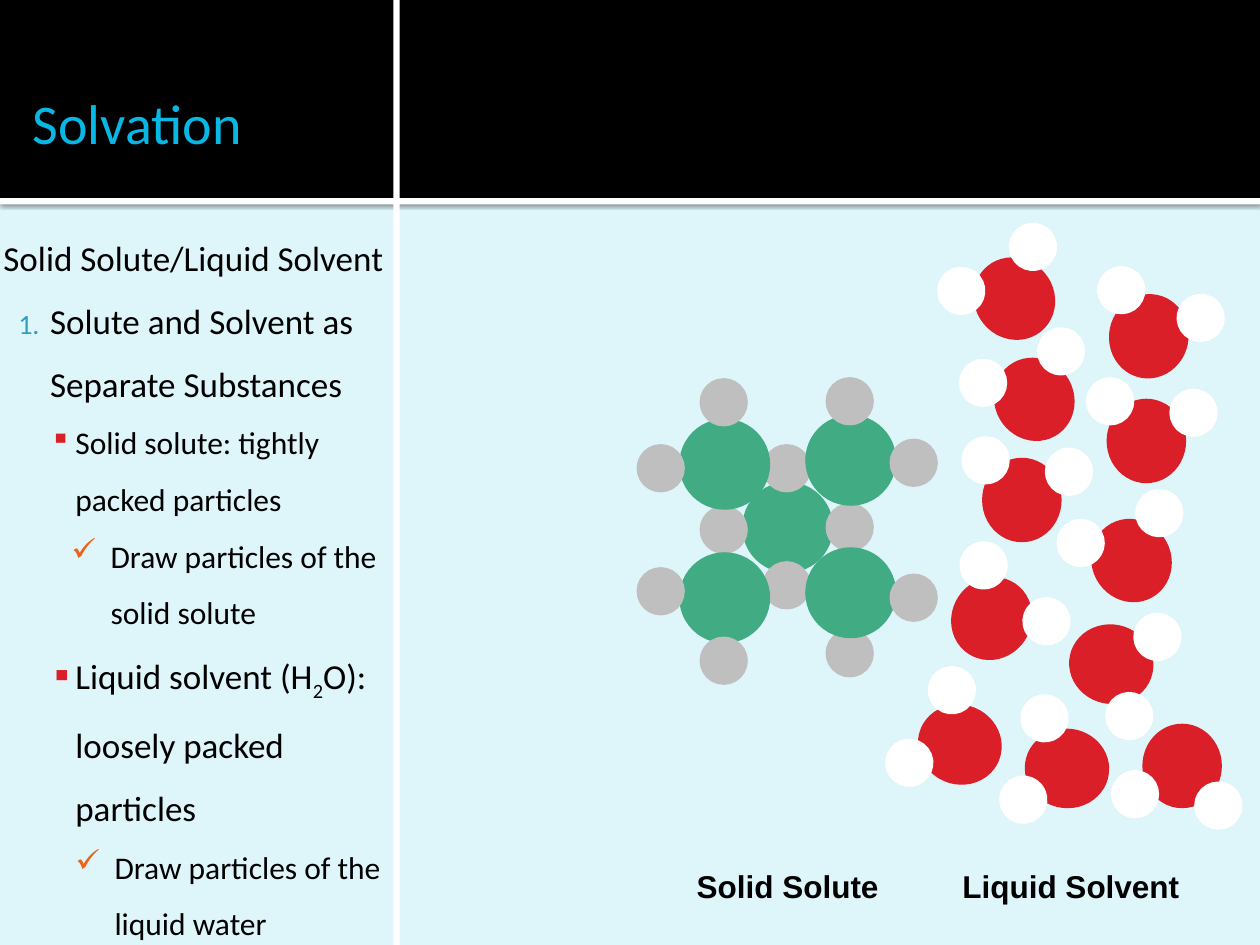
import math
import pptx
import pptx.util
import pptx.dml.color
import pptx.enum.shapes
import pptx.enum.text
import pptx.oxml
import pptx.oxml.ns

Cm, Pt = pptx.util.Cm, pptx.util.Pt
ANCHOR = pptx.enum.text.MSO_ANCHOR
ALIGN = pptx.enum.text.PP_ALIGN
SHAPE = pptx.enum.shapes.MSO_SHAPE
NS = pptx.oxml.ns.nsdecls("a")

COLORS = {
    "sky": "DEF5FA", "black": "000000", "white": "FFFFFF", "title": "08B8E4",
    "solid": "41AB83", "grey": "BFBFBF", "red": "DA1F28",
    "number": "2DA2BF", "check": "EB641B",
}

# Crystal balls from back to front: colour, then centres in cm
CRYSTAL = [
    ("solid", [(2.98, 2.96)]),
    ("grey", [(4.23, 2.96), (4.23, 5.5), (2.96, 1.77), (1.69, 3.01), (2.96, 4.13)]),
    ("solid", [(1.71, 4.38), (4.25, 4.28), (4.25, 1.61), (1.71, 1.69)]),
    ("grey", [(1.69, 5.65), (5.52, 1.66), (5.52, 4.38), (0.42, 1.77),
              (4.23, 0.42), (0.42, 4.25), (1.69, 0.44)]),
]
BALLS = {"solid": 1.7, "grey": 0.84}

# Water: oxygen centre in cm and turn in degrees
WATER = [
    (2.19, 7.97, 33.8), (3.05, 3.55, 330.2), (6.03, 10.94, 180), (5.31, 4.39, 0),
    (5.36, 2.28, 11.5), (2.8, 5.58, 0), (5.01, 6.8, 331.4), (4.6, 8.89, 101.8),
    (1.55, 10.51, 292.6), (2.65, 1.52, 320.7), (3.71, 10.99, 276.8),
]
BONDS = [(-0.73, -0.8), (0.95, -0.57)]

# Bullet styles: level, left margin, hanging indent, bullet, colour, size %
STYLES = {
    "plain": (0, 0, 0, None, None, 100),
    "number": (0, 0.94, -0.64, "1.", "number", 80),
    "square": (1, 1.45, -0.51, "▪", "red", 90),
    "check": (2, 2.16, -0.79, "✓", "check", 100),
    "check2": (2, 2.24, -0.79, "✓", "check", 100),
}
POINTS = [
    ("plain", 20, ["Solid Solute/Liquid Solvent"]),
    ("number", 20, ["Solute and Solvent as Separate Substances"]),
    ("square", 18, ["Solid solute: tightly packed particles"]),
    ("check", 18, ["Draw particles of the solid solute"]),
    ("square", 20, ["Liquid solvent (H", "2", "O): loosely packed particles"]),
    ("check2", 18, ["Draw particles of the liquid water"]),
]


def shade(name):
    return pptx.dml.color.RGBColor.from_string(COLORS[name])


def shape(slide, kind, box, color, line=None, turn=0):
    part = slide.shapes.add_shape(kind, *map(Cm, box))
    part.shadow.inherit = False
    part.fill.solid()
    part.fill.fore_color.rgb = shade(color)
    part.rotation = turn
    if line:
        part.line.color.rgb = shade(color)
        part.line.width = Pt(line)
    else:
        part.line.fill.background()
    return part


def ball(slide, x, y, wide, high, color, turn=0):
    box = (x - wide / 2, y - high / 2, wide, high)
    shape(slide, SHAPE.OVAL, box, color, 3.78, turn)


def frame(slide, box, pads=(0.25, 0.13, 0.25, 0.13), **form):
    text = slide.shapes.add_textbox(*map(Cm, box)).text_frame
    left, top, right, base = map(Cm, pads)
    form = {"word_wrap": True, "margin_left": left, "margin_top": top,
            "margin_right": right, "margin_bottom": base, **form}
    for key, value in form.items():
        setattr(text, key, value)
    return text


def write(para, words, color="black", **form):
    run = para.add_run()
    run.text = words
    for key, value in form.items():
        setattr(run.font, key, value)
    run.font.color.rgb = shade(color)
    return run


def bullet(para, style):
    level, left, hang, mark, color, size = STYLES[style]
    para.level = level
    props = para._p.get_or_add_pPr()
    props.set("marL", str(Cm(left)))
    props.set("indent", str(Cm(hang)))
    if mark is None:
        parts = ["<a:buNone %s/>"]
    else:
        sign = ('<a:buAutoNum %s type="arabicPeriod"/>' if mark == "1."
                else f'<a:buChar %s char="{mark}"/>')
        parts = [f'<a:buClr %s><a:srgbClr val="{COLORS[color]}"/></a:buClr>',
                 f'<a:buSzPct %s val="{size * 1000}"/>', sign]
    for part in parts:
        props.append(pptx.oxml.parse_xml(part.replace("%s", NS)))


def bands(slide, box):
    left, top, wide, high = box
    head, gap = 3.99, 0.13
    rule = shape(slide, SHAPE.RECTANGLE, (left, top + head, wide, gap), "white")
    # Soft shadow below the rule
    props = rule._element.spPr
    props.remove(props.find(pptx.oxml.ns.qn("a:effectLst")))
    props.append(pptx.oxml.parse_xml(
        f'<a:effectLst {NS}><a:outerShdw blurRad="{Pt(2.5)}" dist="{Pt(0.8)}" '
        'dir="5400000" algn="tl" rotWithShape="0"><a:srgbClr val="000000">'
        '<a:alpha val="60000"/></a:srgbClr></a:outerShdw></a:effectLst>'))
    shape(slide, SHAPE.RECTANGLE, (left, top, wide, head), "black")
    shape(slide, SHAPE.RECTANGLE, (left + 7.93, top, gap, high), "white")


def title(slide, box):
    text = frame(slide, box, (0.2, 0.13, 0.13, 0), vertical_anchor=ANCHOR.BOTTOM)
    write(text.paragraphs[0], "Solvation", "title", name="Calibri", size=Pt(32))


def points(slide, box):
    text = frame(slide, box, (0.15, 0.25, 0.25, 0.13))
    for i, (style, size, runs) in enumerate(POINTS):
        para = text.add_paragraph() if i else text.paragraphs[0]
        para.line_spacing = 1.5
        para.space_before = Pt(0)
        bullet(para, style)
        for words in runs:
            run = write(para, words, name="Calibri", size=Pt(size))
            if words == "2":
                run._r.get_or_add_rPr().set("baseline", "-25000")


def solid(slide, box):
    left, top = box[:2]
    for color, spots in CRYSTAL:
        size = BALLS[color]
        for x, y in spots:
            ball(slide, left + x, top + y, size, size, color)


def water(slide, box):
    left, top = box[:2]
    for x, y, turn in WATER:
        x, y = left + x, top + y
        ball(slide, x, y, 1.47, 1.57, "red", turn)
        cos, sin = math.cos(math.radians(turn)), math.sin(math.radians(turn))
        for dx, dy in BONDS:
            ball(slide, x + dx * cos - dy * sin, y + dx * sin + dy * cos,
                 0.84, 0.84, "white", turn)


def label(slide, box, words):
    para = frame(slide, box).paragraphs[0]
    para.alignment = ALIGN.CENTER
    write(para, words, name="Arial", size=Pt(18), bold=True)


def main():
    deck = pptx.Presentation()
    deck.slide_width, deck.slide_height = Cm(25.4), Cm(19.05)
    slide = deck.slides.add_slide(deck.slide_layouts[6])
    slide.background.fill.solid()
    slide.background.fill.fore_color.rgb = shade("sky")

    bands(slide, (0, 0, 25.4, 19.05))
    title(slide, (0.46, 0.43, 7.01, 2.72))
    points(slide, (-0.08, 4.09, 8.56, 14.96))
    solid(slide, (12.9, 7.67, 5.94, 6.1))
    water(slide, (17.8, 4.5, 7.2, 12.2))
    for left, words in ((13.34, "Solid Solute"), (19.05, "Liquid Solvent")):
        label(slide, (left, 17.35, 5.08, 1.02), words)
    deck.save("out.pptx")


if __name__ == "__main__":
    main()
